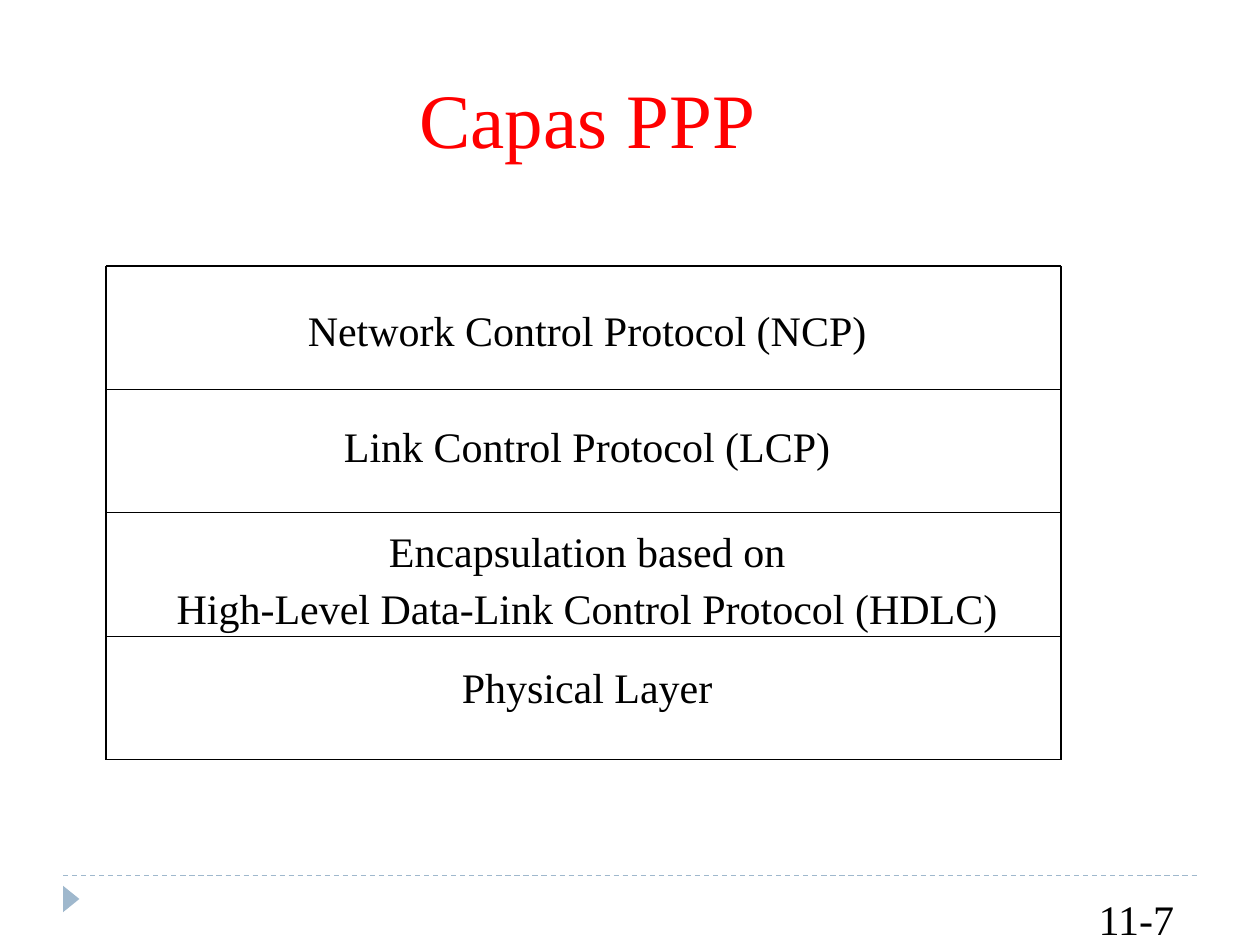
from pptx import Presentation
from pptx.dml.color import RGBColor
from pptx.enum.dml import MSO_LINE
from pptx.enum.shapes import MSO_CONNECTOR, MSO_SHAPE
from pptx.enum.text import MSO_ANCHOR, MSO_AUTO_SIZE, PP_ALIGN
from pptx.oxml.ns import qn
from pptx.util import Inches, Pt
from lxml import etree

STRAIGHT, TRIANGLE = MSO_CONNECTOR.STRAIGHT, MSO_SHAPE.ISOSCELES_TRIANGLE
LEFT, CENTER = PP_ALIGN.LEFT, PP_ALIGN.CENTER

# Content: each layer has its lines and the gap above them
TITLE = "Capas PPP"
PAGE = "11-7"
LAYERS = [
    (["Network Control Protocol (NCP)"], 0.33),
    (["Link Control Protocol (LCP)"], 0.27),
    (["Encapsulation based on",
      "High-Level Data-Link Control Protocol (HDLC)"], 0.13),
    (["Physical Layer"], 0.23),
]
FONT = "Times New Roman"
BLACK, RED, ACCENT = "000000", "FF0000", "9FB8CD"

# Grid of the layer stack, in inches
STACK_LEFT, STACK_TOP, STACK_WIDTH, ROW_HEIGHT = 0.84, 2.11, 7.58, 0.98
STACK_RIGHT = STACK_LEFT + STACK_WIDTH
STACK_BOTTOM = STACK_TOP + ROW_HEIGHT * len(LAYERS)
TEXT_SHIFT = 0.06


def color(value):
    return RGBColor.from_string(value)


def add_line(x1, y1, x2, y2, stroke=BLACK, width=0.82):
    line = slide.shapes.add_connector(
        STRAIGHT, Inches(x1), Inches(y1), Inches(x2), Inches(y2))
    line.line.color.rgb = color(stroke)
    line.line.width = Pt(width)
    etree.SubElement(line._element.spPr, qn("a:effectLst"))
    return line


def write(shape, lines, size=24, ink=BLACK, align=LEFT, top=0, left=0, **spacing):
    frame = shape.text_frame
    frame_format = {
        "word_wrap": True, "auto_size": MSO_AUTO_SIZE.NONE,
        "vertical_anchor": MSO_ANCHOR.TOP,
        "margin_left": Inches(left), "margin_top": Inches(top),
        "margin_right": 0, "margin_bottom": 0,
    }
    for name, value in frame_format.items():
        setattr(frame, name, value)
    frame.text = "\n".join(lines)
    for index, paragraph in enumerate(frame.paragraphs):
        paragraph.alignment = align
        paragraph.space_before = Pt(5 if index else 0)
        for name, value in spacing.items():
            setattr(paragraph, name, value)
        font = paragraph.runs[0].font
        font.name, font.size, font.color.rgb = FONT, Pt(size), color(ink)


def add_text(x, y, width, height, lines, **text_format):
    box = slide.shapes.add_textbox(*map(Inches, (x, y, width, height)))
    write(box, lines, **text_format)


prs = Presentation()
prs.slide_width, prs.slide_height = Inches(10), Inches(7.5)
slide = prs.slides.add_slide(prs.slide_layouts[5])

# Footer rule and marker
rule = add_line(0.5, 6.95, 9.5, 6.95, ACCENT, 0.75)
rule.line.dash_style = MSO_LINE.DASH
marker = slide.shapes.add_shape(
    TRIANGLE, Inches(0.46), Inches(7.07), Inches(0.21), Inches(0.13))
marker.rotation = 90
marker.shadow.inherit = False
marker.fill.solid()
marker.fill.fore_color.rgb = color(ACCENT)
marker.line.fill.background()

# Frame and dividers of the stack
for row in range(len(LAYERS) + 1):
    y = STACK_TOP + row * ROW_HEIGHT
    add_line(STACK_LEFT, y, STACK_RIGHT, y)
for x in (STACK_LEFT, STACK_RIGHT):
    add_line(x, STACK_TOP, x, STACK_BOTTOM)

# Title and page number
title = slide.shapes.title
title.left, title.top, title.width, title.height = map(
    Inches, (3.33, 0.57, 3.75, 0.64))
write(title, [TITLE], size=44, ink=RED)
add_text(8.72, 7.09, 0.68, 0.36, [PAGE])

# Layer names
for row, (lines, gap) in enumerate(LAYERS):
    add_text(STACK_LEFT, STACK_TOP + row * ROW_HEIGHT, STACK_WIDTH, ROW_HEIGHT,
             lines, align=CENTER, top=gap, left=TEXT_SHIFT, line_spacing=0.96)

prs.save("out.pptx")
